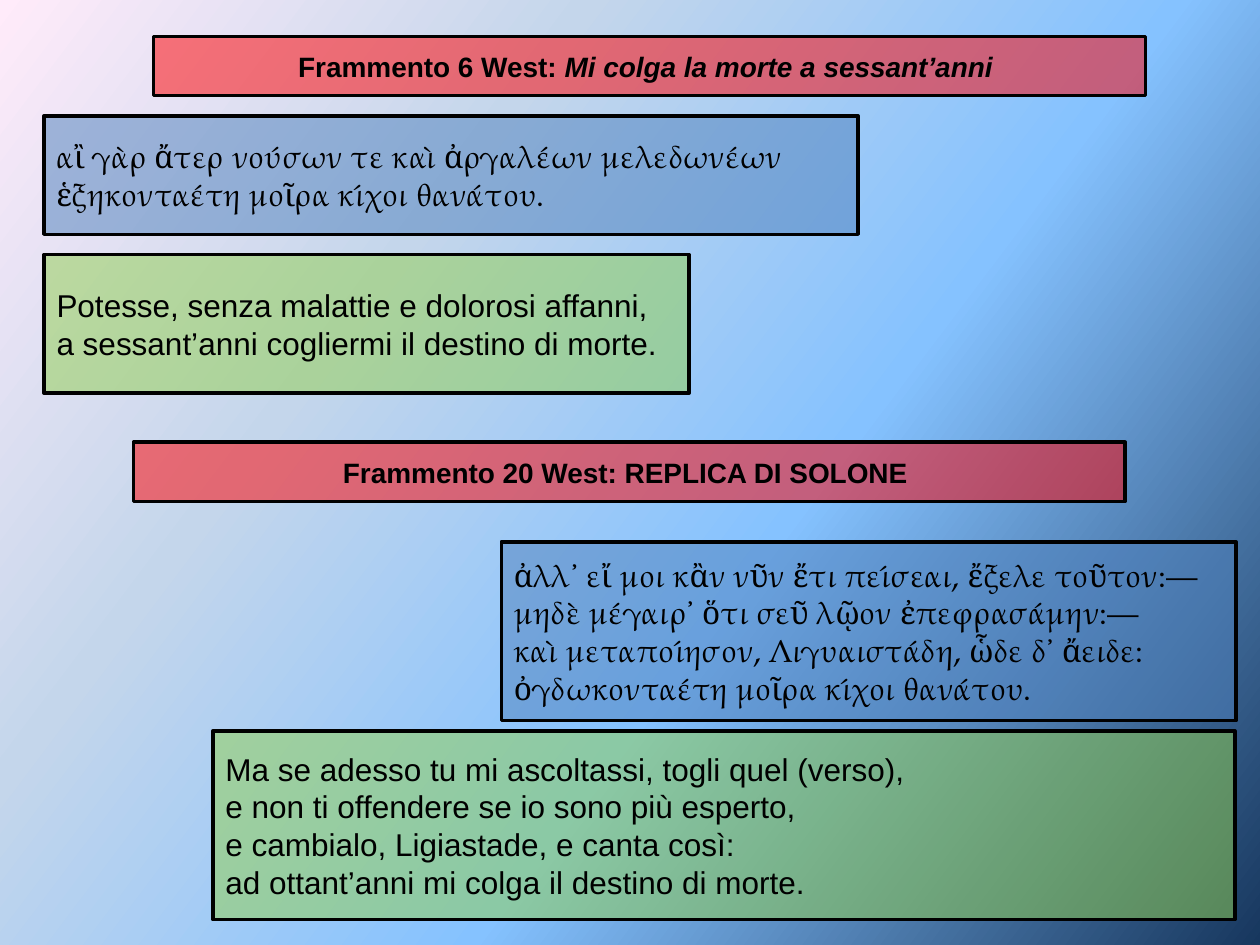
"""Build a slide with two Greek fragments and their Italian translations."""
from lxml import etree
from pptx import Presentation
from pptx.dml.color import RGBColor
from pptx.enum.shapes import MSO_SHAPE
from pptx.enum.text import MSO_ANCHOR, PP_ALIGN
from pptx.oxml.ns import qn
from pptx.util import Inches, Pt

RECT = MSO_SHAPE.RECTANGLE
MIDDLE = MSO_ANCHOR.MIDDLE
LEFT, CENTER, JUST = PP_ALIGN.LEFT, PP_ALIGN.CENTER, PP_ALIGN.JUSTIFY

BLACK = RGBColor(0x00, 0x00, 0x00)
RED = RGBColor(0xFF, 0x00, 0x00)
BLUE = RGBColor(0x4F, 0x81, 0xBD)
GREEN = RGBColor(0x92, 0xD0, 0x50)
NAVY = RGBColor(0x17, 0x37, 0x5E)
SKY = RGBColor(0x85, 0xC2, 0xFF)
PALE = RGBColor(0xC4, 0xD6, 0xEB)
PINK = RGBColor(0xFF, 0xEB, 0xFA)

SANS, GREEK = "Arial", "TeX Gyre Pagella"
STOPS = [(0, NAVY), (40, SKY), (70, PALE), (100, PINK)]


def add_color(parent, color):
    node = etree.SubElement(parent, qn("a:srgbClr"))
    node.set("val", str(color))
    return node


def add_box(slide, place, color, lines, font, size=18, align=LEFT, bold=False):
    box = slide.shapes.add_shape(RECT, *[Inches(n) for n in place])
    box.shadow.inherit = False
    box.fill.solid()
    box.fill.fore_color.rgb = color
    shade = box.fill._xPr.find(qn("a:solidFill")).find(qn("a:srgbClr"))
    etree.SubElement(shade, qn("a:alpha")).set("val", "51000")
    box.line.color.rgb = BLACK
    box.line.width = Pt(2)
    frame = box.text_frame
    frame.word_wrap = True
    frame.vertical_anchor = MIDDLE
    for i, line in enumerate(lines):
        para = frame.add_paragraph() if i else frame.paragraphs[0]
        para.alignment = align
        for j, text in enumerate(line):
            run = para.add_run()
            run.text = text
            run.font.name = font
            run.font.size = Pt(size)
            run.font.bold = bold
            run.font.italic = j > 0
            run.font.color.rgb = BLACK


deck = Presentation()
deck.slide_width, deck.slide_height = Inches(10), Inches(7.5)
slide = deck.slides.add_slide(deck.slide_layouts[6])

fill = slide.background.fill
fill.gradient()
fill.gradient_angle = 143
stops = slide.element.find(".//" + qn("a:gsLst"))
stops.clear()
for pos, color in STOPS:
    stop = etree.SubElement(stops, qn("a:gs"))
    stop.set("pos", str(pos * 1000))
    add_color(stop, color)

titles = [
    ((1.22, 0.29, 7.87, 0.47),
     ["Frammento 6 West: ", "Mi colga la morte a sessant’anni "]),
    ((1.06, 3.51, 7.87, 0.47), ["Frammento 20 West: REPLICA DI SOLONE "]),
]
verses = [
    ((0.35, 0.92, 6.46, 0.94), BLUE, GREEK, JUST, [
        "αἲ γὰρ ἄτερ νούσων τε καὶ ἀργαλέων μελεδωνέων",
        "ἑξηκονταέτη μοῖρα κίχοι θανάτου."]),
    ((0.35, 2.02, 5.12, 1.1), GREEN, SANS, LEFT, [
        "Potesse, senza malattie e dolorosi affanni,",
        "a sessant’anni cogliermi il destino di morte."]),
    ((3.98, 4.3, 5.83, 1.42), BLUE, GREEK, LEFT, [
        "ἀλλ᾽ εἴ μοι κἂν νῦν ἔτι πείσεαι, ἔξελε τοῦτον:—",
        "μηδὲ μέγαιρ᾽ ὅτι σεῦ λῷον ἐπεφρασάμην:—",
        "καὶ μεταποίησον, Λιγυαιστάδη, ὧδε δ᾽ ἄειδε:",
        "ὀγδωκονταέτη μοῖρα κίχοι θανάτου."]),
    ((1.69, 5.8, 8.11, 1.5), GREEN, SANS, LEFT, [
        "Ma se adesso tu mi ascoltassi, togli quel (verso),",
        "e non ti offendere se io sono più esperto,",
        "e cambialo, Ligiastade, e canta così:",
        "ad ottant’anni mi colga il destino di morte."]),
]
for place, runs in titles:
    add_box(slide, place, RED, [runs], SANS, 16, CENTER, True)
for place, color, font, align, lines in verses:
    add_box(slide, place, color, [[line] for line in lines], font, align=align)

deck.save("out.pptx")
